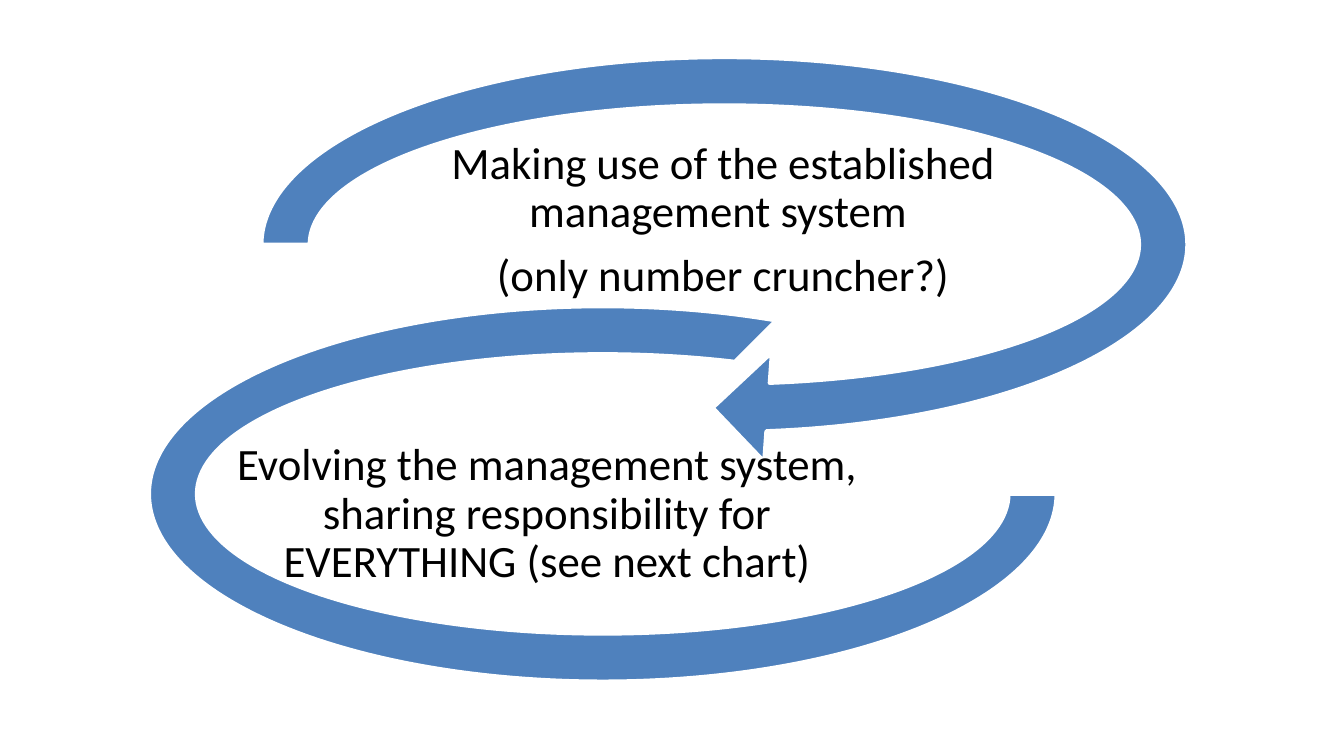
import pptx
import pptx.dml.color
import pptx.enum.shapes
import pptx.enum.text
import pptx.util

Inches = pptx.util.Inches
Pt = pptx.util.Pt
SHAPES = pptx.enum.shapes.MSO_SHAPE

COLORS = {"band": "4F81BD", "outline": "FFFFFF", "text": "000000"}


def rgb(name):
    return pptx.dml.color.RGBColor.from_string(COLORS[name])


def add_text(shapes, box, paragraphs, *, size=24, font="Calibri", color="text",
             line_spacing=0.9, space_after=8.4, inset=0.02):
    """Add centred paragraphs in a text box."""
    text_box = shapes.add_textbox(*map(Inches, box))
    frame = text_box.text_frame
    frame.word_wrap = True
    frame.vertical_anchor = pptx.enum.text.MSO_ANCHOR.MIDDLE
    frame.margin_left = frame.margin_right = Inches(inset)
    frame.margin_top = frame.margin_bottom = Inches(inset)
    for index, text in enumerate(paragraphs):
        paragraph = frame.add_paragraph() if index else frame.paragraphs[0]
        paragraph.alignment = pptx.enum.text.PP_ALIGN.CENTER
        paragraph.line_spacing = line_spacing
        paragraph.space_after = Pt(space_after)
        run = paragraph.add_run()
        run.text = text
        run.font.name = font
        run.font.size = Pt(size)
        run.font.color.rgb = rgb(color)


def add_loop(shapes, box, kind, adjustments, text_area, paragraphs):
    """Add a curved band and its text; text_area is relative to the box."""
    band = shapes.add_shape(kind, *map(Inches, box))
    for index, value in enumerate(adjustments):
        band.adjustments[index] = value
    band.shadow.inherit = False
    band.fill.solid()
    band.fill.fore_color.rgb = rgb("band")
    band.line.color.rgb = rgb("outline")
    band.line.width = Pt(2)

    left, top, width, height = text_area
    add_text(shapes, (box[0] + left, box[1] + top, width, height), paragraphs)


def main():
    presentation = pptx.Presentation()
    # Widescreen, 16:9
    presentation.slide_width = Inches(10)
    presentation.slide_height = Inches(10 * 9 / 16)
    slide = presentation.slides.add_slide(presentation.slide_layouts[6])
    shapes = slide.shapes.add_group_shape().shapes

    # Upper loop: arrow leading into the second step
    add_loop(shapes, (1.72, 0.2, 7.34, 3.24), SHAPES.CIRCULAR_ARROW,
             (0.11, 11.423, 45, 108, 0.125), (1.38, 0.61, 4.56, 1.67),
             ["Making use of the established management system ",
              "(only number cruncher?)"])

    # Lower loop: open arc around the second step
    add_loop(shapes, (1.11, 2.28, 6.75, 2.79), SHAPES.BLOCK_ARC,
             (0, 189, 0.127), (0.45, 0.96, 5.02, 1.18),
             ["Evolving the management system, sharing responsibility for "
              "EVERYTHING (see next chart)"])

    presentation.save("out.pptx")


if __name__ == "__main__":
    main()
